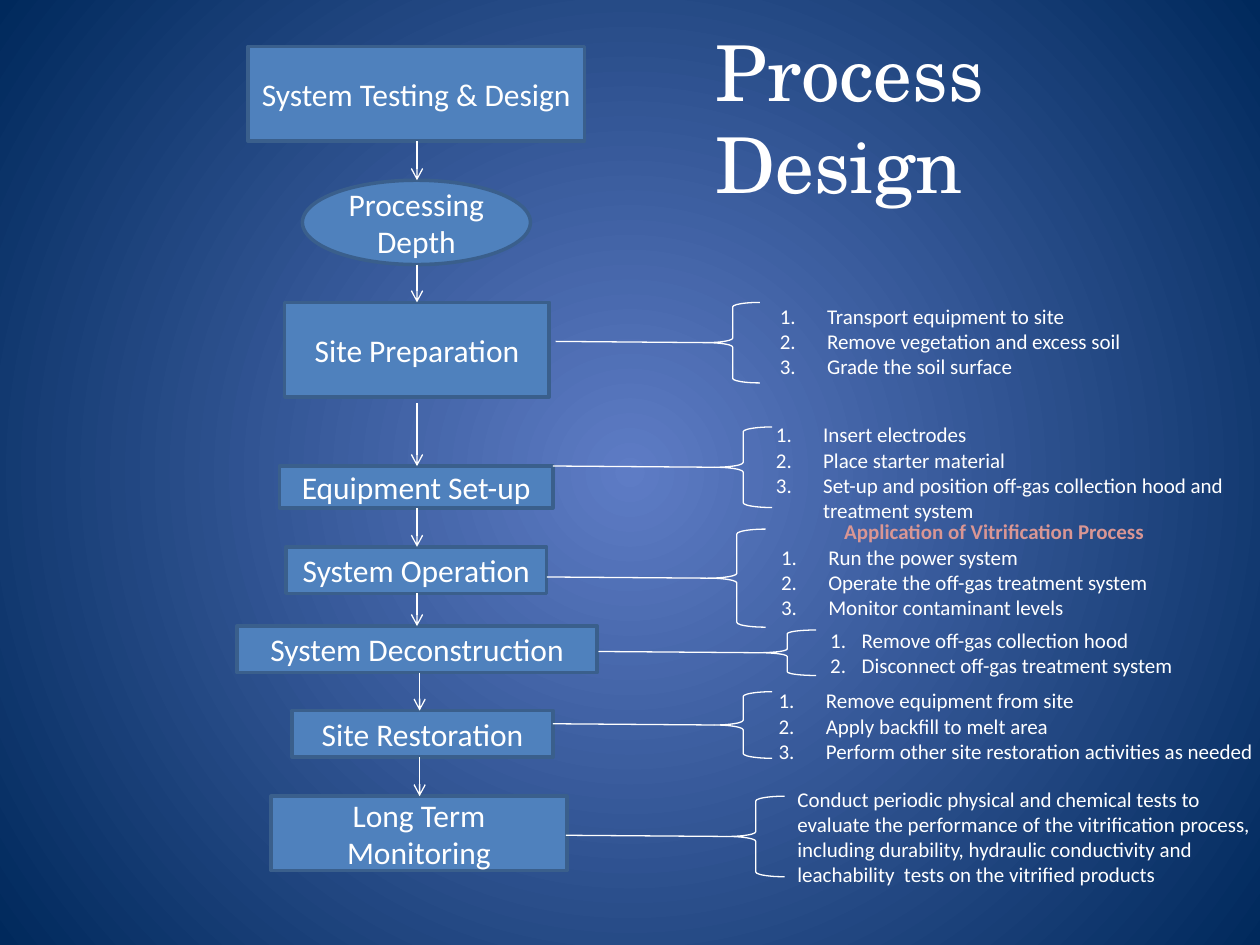
from dataclasses import dataclass
from typing import NamedTuple

from lxml.etree import SubElement
from pptx import Presentation
from pptx.dml.color import RGBColor as RGB
from pptx.enum.shapes import MSO_CONNECTOR as Connector, MSO_SHAPE as Shape
from pptx.enum.text import MSO_ANCHOR as Anchor, MSO_AUTO_SIZE as AutoSize, PP_ALIGN as Align
from pptx.oxml.ns import qn
from pptx.slide import Slide
from pptx.util import Pt


@dataclass(frozen=True)
class Theme:
    centre: RGB = RGB(0x5E, 0x7C, 0xC5)
    edge: RGB = RGB(0x00, 0x29, 0x5C)
    box: RGB = RGB(0x4F, 0x81, 0xBD)
    border: RGB = RGB(0x3A, 0x5F, 0x8C)
    text: RGB = RGB(0xFF, 0xFF, 0xFF)
    heading: RGB = RGB(0xD9, 0x96, 0x94)
    title_font: str = "TeX Gyre Schola"
    body_font: str = "Calibri"
    title_size: float = 44
    step_size: float = 18
    note_size: float = 12
    border_width: float = 2
    line_width: float = 0.75


class Box(NamedTuple):
    x: float
    y: float
    w: float
    h: float

    def lengths(self) -> list[Pt]:
        return [Pt(v) for v in self]


@dataclass(frozen=True)
class Step:
    label: str
    box: Box
    kind: Shape = Shape.RECTANGLE
    arrow_x: float = 238.3
    arrow_gap: float = 0


@dataclass(frozen=True)
class Note:
    lead_x: float
    brace: Box
    box: Box
    lines: tuple[str, ...]
    heading: str = ""
    indent: float = 27


THEME = Theme()
LEAD_RISE = 0.7

STEPS = [
    Step("System Testing & Design", Box(141.8, 26.6, 192.2, 54)),
    Step("Processing Depth", Box(172.8, 103, 130.3, 48.2), Shape.OVAL),
    Step("Site Preparation", Box(162.7, 172.8, 151.2, 54), arrow_gap=3.6),
    Step("Equipment Set-up", Box(159.8, 266.4, 156.2, 23.8)),
    Step("System Operation", Box(163.4, 312.5, 149, 26.6)),
    Step("System Deconstruction", Box(135.4, 357.8, 205.9, 26.6), arrow_x=239.8),
    Step("Site Restoration", Box(167, 406.1, 149, 26.6), arrow_x=239.8),
    Step("Long Term Monitoring", Box(154.8, 455, 169.2, 42.5)),
]

NOTES = [
    Note(317.5, Box(403.2, 172.8, 31, 46), Box(438.5, 169.9, 267, 51),
         ("Transport equipment to site", "Remove vegetation and excess soil",
          "Grade the soil surface")),
    Note(316, Box(408.2, 244, 33, 46), Box(436.3, 237.6, 278.6, 65.5),
         ("Insert electrodes", "Place starter material",
          "Set-up and position off-gas collection hood and treatment system")),
    Note(312.5, Box(404.6, 302.4, 33, 56), Box(439.2, 293, 257.8, 65.5),
         ("Run the power system", "Operate the off-gas treatment system",
          "Monitor contaminant levels"),
         heading="Application of Vitrification Process"),
    Note(342, Box(433.4, 360, 33, 26), Box(467.3, 355, 257.8, 36),
         ("Remove off-gas collection hood", "Disconnect off-gas treatment system"),
         indent=18),
    Note(316, Box(408.2, 395.3, 33, 38), Box(437.8, 389.5, 294.5, 51),
         ("Remove equipment from site", "Apply backfill to melt area",
          "Perform other site restoration activities as needed")),
    Note(323.3, Box(415.4, 455, 33, 46), Box(448.6, 445.7, 278.6, 65.5),
         ("Conduct periodic physical and chemical tests to evaluate the performance "
          "of the vitrification process, including durability, hydraulic conductivity "
          "and leachability  tests on the vitrified products",), indent=0),
]


def style(p, size: float, color: RGB = THEME.text, font: str = THEME.body_font) -> None:
    p.font.name = font
    p.font.size = Pt(size)
    p.font.color.rgb = color


def paint_background(s: Slide) -> None:
    fill = s.background.fill
    fill.gradient()
    for stop, color, position in zip(fill.gradient_stops, (THEME.centre, THEME.edge), (0, 1)):
        stop.color.rgb = color
        stop.position = position
    grad = next(s.background._cSld.iter(qn("a:gradFill")))
    grad.remove(grad.find(qn("a:lin")))
    circle = SubElement(grad, qn("a:path"), {"path": "circle"})
    SubElement(circle, qn("a:fillToRect"), {side: "50000" for side in "ltrb"})


def add_title(s: Slide, text: str, box: Box) -> None:
    sp = s.shapes.title
    sp.left, sp.top, sp.width, sp.height = box.lengths()
    tf = sp.text_frame
    tf.text = text
    tf.word_wrap = True
    tf.auto_size = AutoSize.NONE
    tf.vertical_anchor = Anchor.MIDDLE
    p = tf.paragraphs[0]
    p.alignment = Align.LEFT
    style(p, THEME.title_size, font=THEME.title_font)


def add_step(s: Slide, step: Step) -> None:
    sp = s.shapes.add_shape(step.kind, *step.box.lengths())
    sp.shadow.inherit = False
    sp.fill.solid()
    sp.fill.fore_color.rgb = THEME.box
    sp.line.color.rgb = THEME.border
    sp.line.width = Pt(THEME.border_width)
    tf = sp.text_frame
    tf.text = step.label
    tf.word_wrap = True
    tf.vertical_anchor = Anchor.MIDDLE
    p = tf.paragraphs[0]
    p.alignment = Align.CENTER
    style(p, THEME.step_size)


def add_line(s: Slide, x1: float, y1: float, x2: float, y2: float, arrow: bool = False) -> None:
    line = s.shapes.add_connector(Connector.STRAIGHT, Pt(x1), Pt(y1), Pt(x2), Pt(y2))
    line.line.color.rgb = THEME.text
    line.line.width = Pt(THEME.line_width)
    props = line._element.spPr
    if arrow:
        SubElement(props.find(qn("a:ln")), qn("a:tailEnd"), {"type": "arrow"})
    SubElement(props, qn("a:effectLst"))


def add_note(s: Slide, note: Note) -> None:
    sp = s.shapes.add_shape(Shape.LEFT_BRACE, *note.brace.lengths())
    sp.shadow.inherit = False
    sp.fill.background()
    sp.line.color.rgb = THEME.text
    sp.line.width = Pt(THEME.line_width)
    middle = note.brace.y + note.brace.h / 2
    add_line(s, note.lead_x, middle - LEAD_RISE, note.brace.x, middle)

    tf = s.shapes.add_textbox(*note.box.lengths()).text_frame
    tf.word_wrap = True
    p = tf.paragraphs[0]
    if note.heading:
        p.text = note.heading
        p.alignment = Align.CENTER
        style(p, THEME.note_size, THEME.heading)
        p.font.bold = True
        p = tf.add_paragraph()
    for i, text in enumerate(note.lines):
        p = tf.add_paragraph() if i else p
        p.text = text
        style(p, THEME.note_size)
        if note.indent:
            props = p._p.get_or_add_pPr()
            props.set("marL", str(Pt(note.indent)))
            props.set("indent", str(-Pt(note.indent)))
            number = SubElement(props, qn("a:buAutoNum"), {"type": "arabicPeriod"})
            props.find(qn("a:defRPr")).addprevious(number)


def main() -> None:
    prs = Presentation()
    prs.slide_width, prs.slide_height = Pt(720), Pt(540)
    s = prs.slides.add_slide(prs.slide_layouts.get_by_name("Title Only"))
    paint_background(s)
    add_title(s, "Process Design", Box(401.8, 21.6, 311.8, 90))
    for step in STEPS:
        add_step(s, step)
    for step, following in zip(STEPS, STEPS[1:]):
        start = step.box.y + step.box.h + step.arrow_gap
        add_line(s, step.arrow_x, start, step.arrow_x, following.box.y, arrow=True)
    for note in NOTES:
        add_note(s, note)
    prs.save("out.pptx")


if __name__ == "__main__":
    main()
